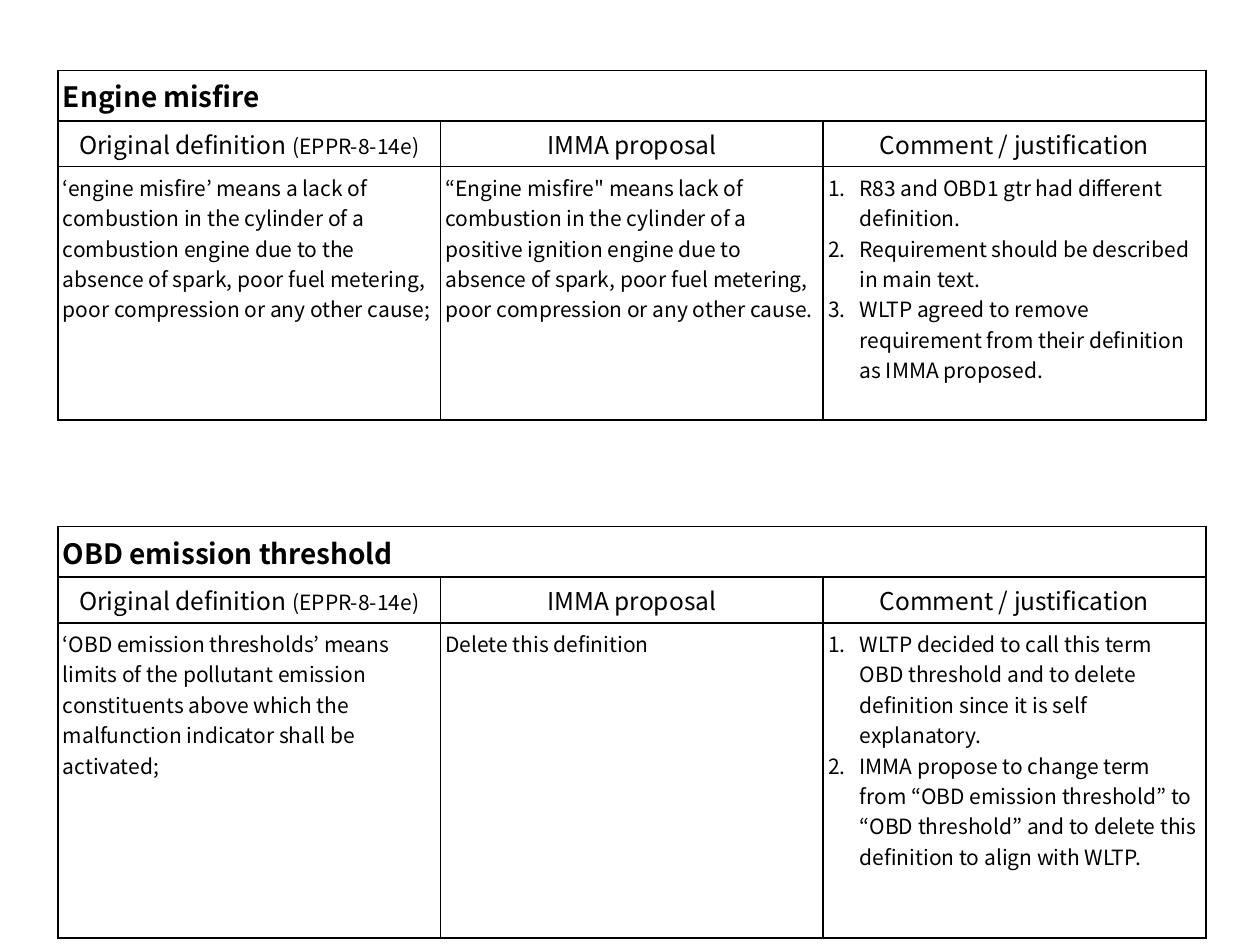
"""Build a slide with two tables that compare definitions and proposals."""
import pptx
import pptx.dml.color
import pptx.enum.text
import pptx.oxml.ns
import pptx.util
from lxml import etree

Inches = pptx.util.Inches
ALIGN = pptx.enum.text.PP_ALIGN
HEADINGS = [
    [("Original definition ", 14), ("(EPPR-8-14e)", 12)],
    [("IMMA proposal", 14)],
    [("Comment / justification", 14)],
]


def color(value):
    return pptx.dml.color.RGBColor.from_string(value)


def add_text(para, text, size=12, bold=False, font="Noto Sans CJK JP", ink="000000"):
    span = para.add_run()
    span.text = text
    span.font.size = pptx.util.Pt(size)
    span.font.bold = bold
    span.font.name = font
    span.font.color.rgb = color(ink)


def add_element(parent, tag, **attributes):
    element = etree.SubElement(parent, pptx.oxml.ns.qn(tag))
    for name, value in attributes.items():
        element.set(name, str(value))
    return element


class DefinitionSlide:
    def __init__(self, slide, ink="000000", border=1, inset=0.04, indent=0.25):
        self.slide = slide
        self.ink = ink
        self.border = pptx.util.Pt(border)
        self.inset = Inches(inset)
        self.indent = Inches(indent)

    def style_cell(self, cell):
        cell.margin_left = cell.margin_right = self.inset
        cell.margin_top = cell.margin_bottom = self.inset
        properties = cell._tc.get_or_add_tcPr()
        for side in "LRTB":
            line = add_element(properties, f"a:ln{side}", w=self.border)
            fill = add_element(line, "a:solidFill")
            add_element(fill, "a:srgbClr", val=self.ink)
        cell.fill.background()

    def add_numbered(self, frame, items):
        for index, item in enumerate(items):
            para = frame.add_paragraph() if index else frame.paragraphs[0]
            properties = para._p.get_or_add_pPr()
            properties.set("marL", str(self.indent))
            properties.set("indent", str(-self.indent))
            add_element(properties, "a:buFont", typeface="+mj-lt")
            add_element(properties, "a:buAutoNum", type="arabicPeriod")
            add_text(para, item, ink=self.ink)

    def add_definition(self, top, heights, term, original, proposal, comments):
        table = self.slide.shapes.add_table(
            3, 3, Inches(0.46), Inches(top), Inches(9.11), Inches(sum(heights))
        ).table
        table.first_row = table.horz_banding = False
        for row, height in zip(table.rows, heights):
            row.height = Inches(height)
        for cell in table.iter_cells():
            self.style_cell(cell)

        table.cell(0, 0).merge(table.cell(0, 2))
        title = table.cell(0, 0).text_frame.paragraphs[0]
        add_text(title, term, size=16, bold=True, ink=self.ink)
        for column, heading in enumerate(HEADINGS):
            para = table.cell(1, column).text_frame.paragraphs[0]
            para.alignment = ALIGN.CENTER
            for text, size in heading:
                add_text(para, text, size=size, ink=self.ink)
        for column, text in enumerate((original, proposal)):
            add_text(table.cell(2, column).text_frame.paragraphs[0], text, ink=self.ink)
        self.add_numbered(table.cell(2, 2).text_frame, comments)


def main():
    deck = pptx.Presentation()
    deck.slide_width, deck.slide_height = Inches(10), Inches(7.5)
    page = DefinitionSlide(deck.slides.add_slide(deck.slide_layouts[6]))
    page.add_definition(
        0.56, (0.4, 0.36, 2.01), "Engine misfire",
        "‘engine misfire’ means a lack of combustion in the cylinder of a combustion "
        "engine due to the absence of spark, poor fuel metering, poor compression or "
        "any other cause;",
        "“Engine misfire\" means lack of combustion in the cylinder of a positive "
        "ignition engine due to absence of spark, poor fuel metering, poor compression "
        "or any other cause.",
        [
            "R83 and OBD1 gtr had different definition.",
            "Requirement should be described in main text.",
            "WLTP agreed to remove requirement from their definition as IMMA proposed.",
        ],
    )
    page.add_definition(
        4.18, (0.4, 0.36, 2.5), "OBD emission threshold",
        "‘OBD emission thresholds’ means limits of the pollutant emission constituents "
        "above which the malfunction indicator shall be activated;",
        "Delete this definition",
        [
            "WLTP decided to call this term OBD threshold and to delete definition since "
            "it is self explanatory.",
            "IMMA propose to change term from “OBD emission threshold” to “OBD threshold” "
            "and to delete this definition to align with WLTP.",
        ],
    )
    deck.save("out.pptx")


if __name__ == "__main__":
    main()
